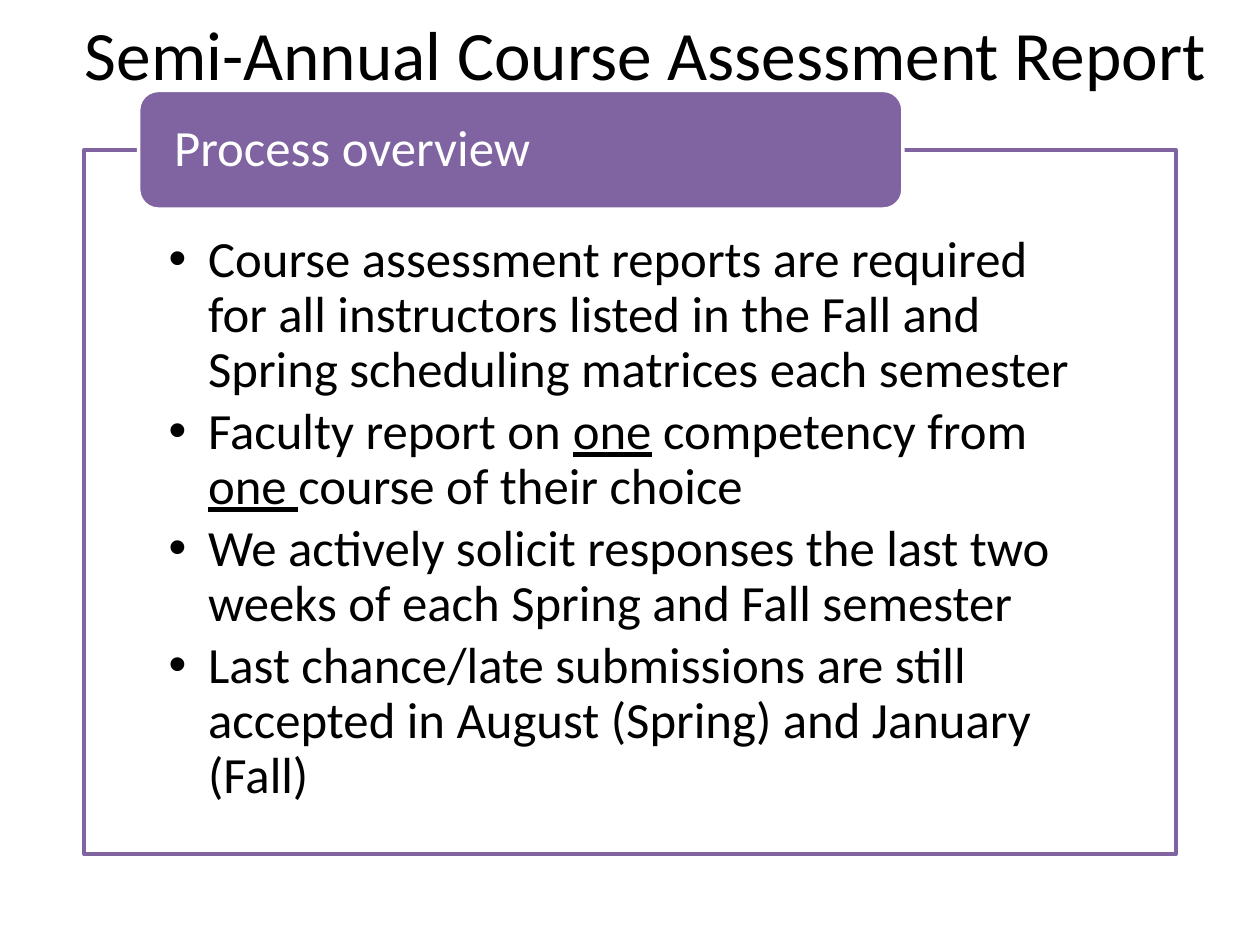
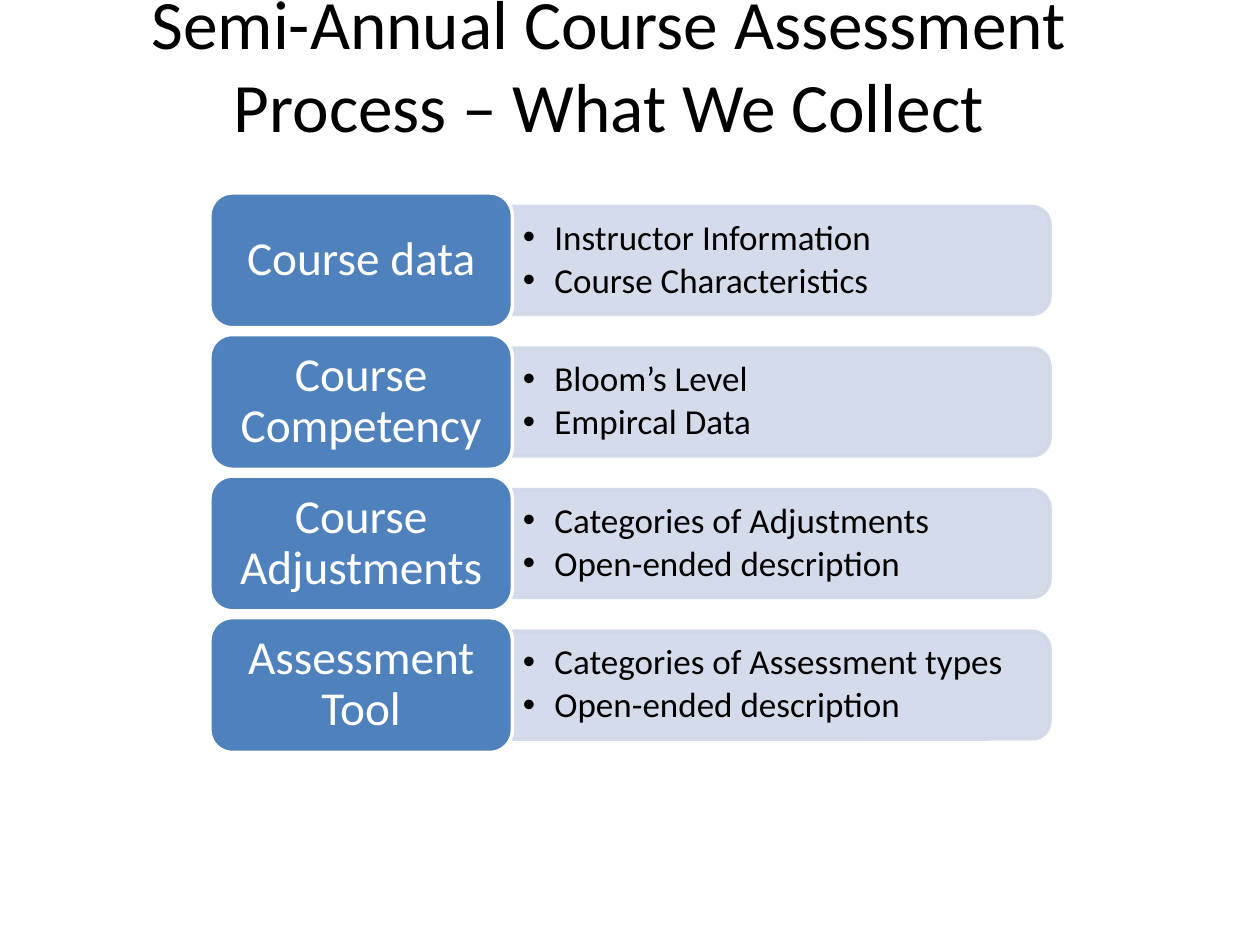
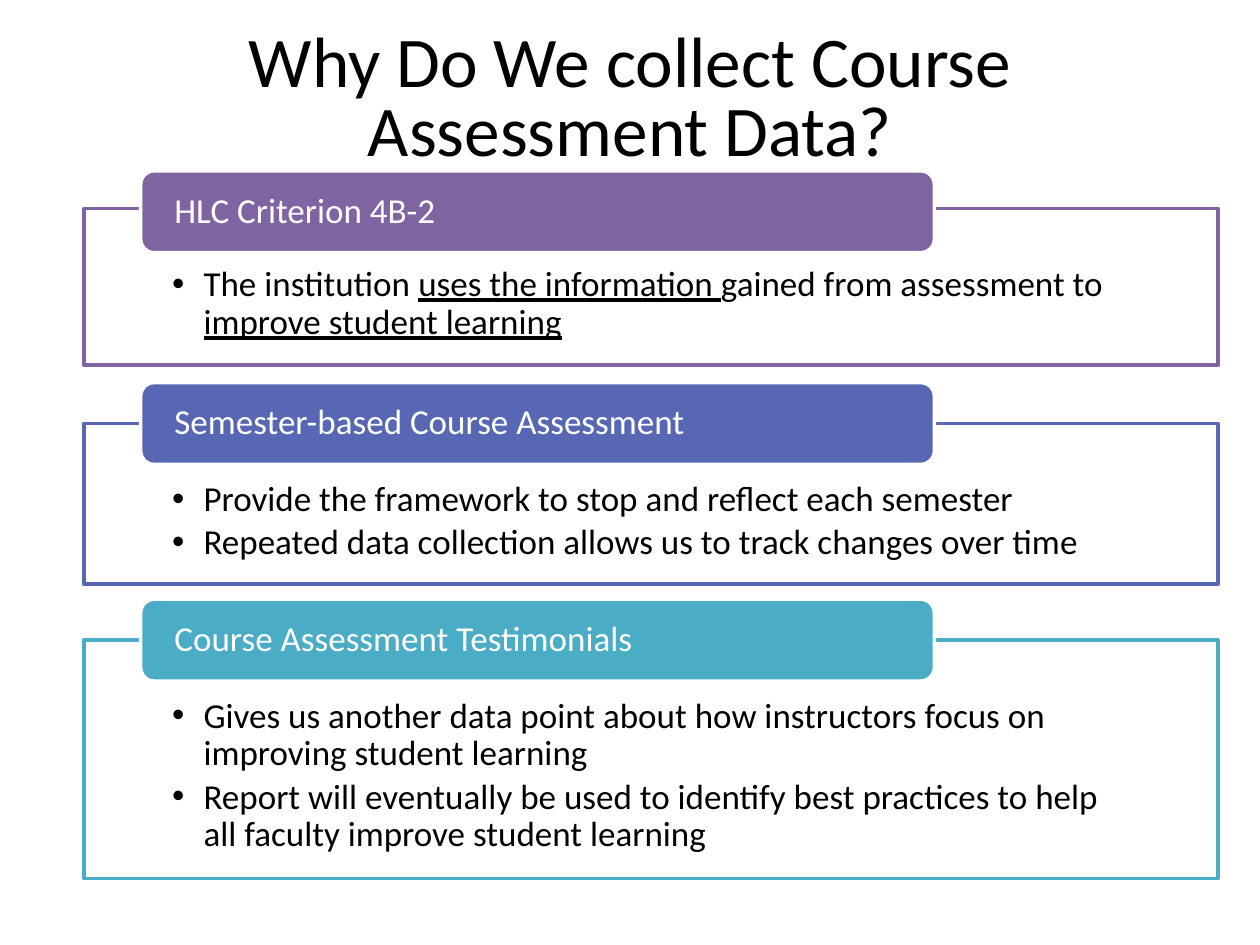
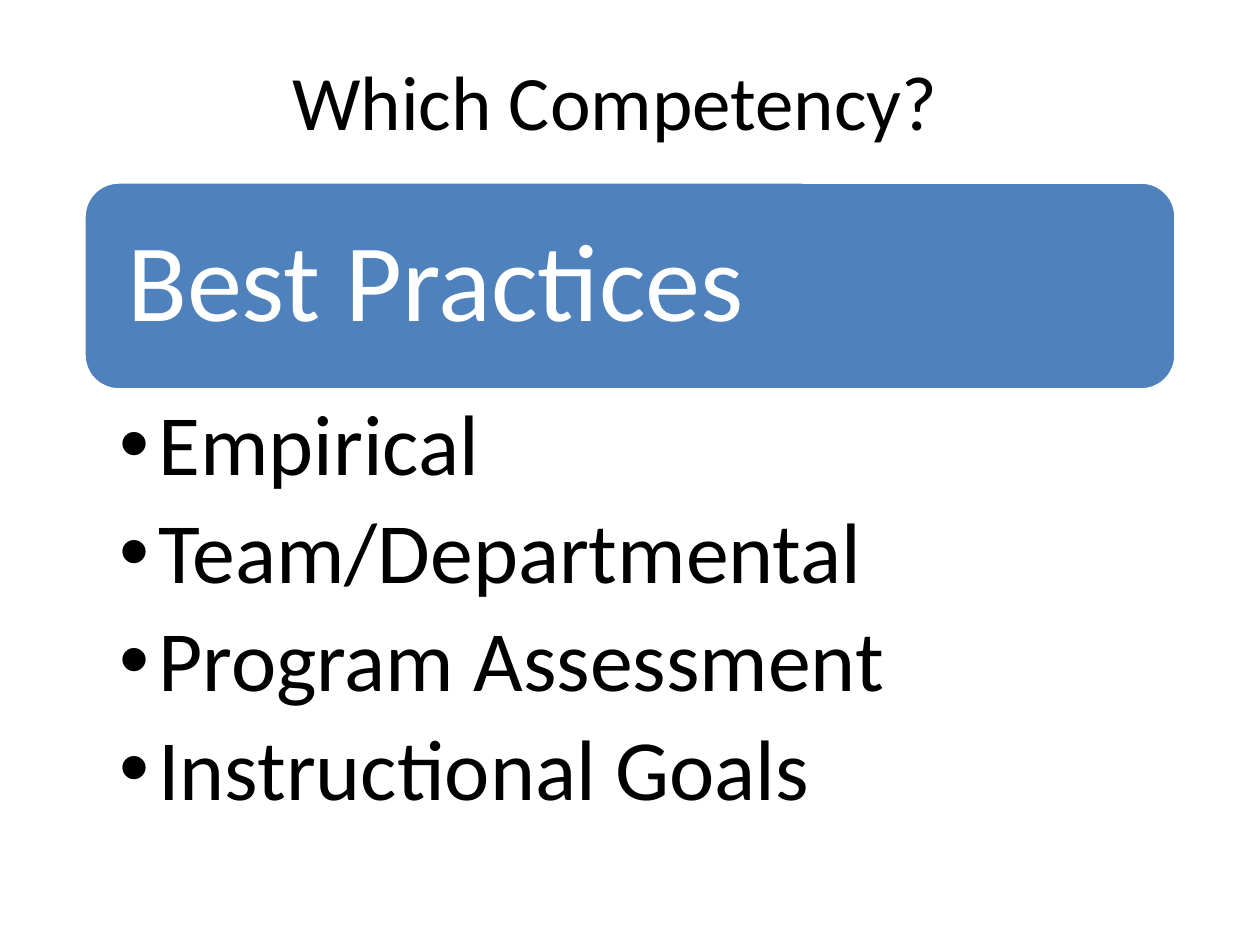
from pptx import Presentation
from pptx.dml.color import RGBColor
from pptx.enum.shapes import MSO_SHAPE
from pptx.enum.text import MSO_ANCHOR, PP_ALIGN
from pptx.oxml.ns import qn
from pptx.util import Pt
from lxml import etree

RECT = MSO_SHAPE.RECTANGLE
ROUND = MSO_SHAPE.ROUNDED_RECTANGLE
CAPPED = MSO_SHAPE.ROUND_2_SAME_RECTANGLE
TOP, MIDDLE, BOTTOM = MSO_ANCHOR.TOP, MSO_ANCHOR.MIDDLE, MSO_ANCHOR.BOTTOM
LEFT, CENTER = PP_ALIGN.LEFT, PP_ALIGN.CENTER

COLORS = {
    "black": "000000",
    "white": "FFFFFF",
    "purple": "8064A2",
    "indigo": "5767B4",
    "teal": "4BACC6",
    "blue": "4F81BD",
    "pale": "D0D8E8",
}


def color(name):
    return RGBColor.from_string(COLORS[name])


class Deck:
    font = "Calibri"

    def __init__(self):
        self.prs = Presentation()
        self.prs.slide_width, self.prs.slide_height = Pt(720), Pt(540)
        self.slide = None

    def start(self):
        self.slide = self.prs.slides.add_slide(self.prs.slide_layouts[6])

    def shape(self, kind, box, fill, line):
        item = self.slide.shapes.add_shape(kind, *map(Pt, box))
        item.shadow.inherit = False
        item.fill.solid()
        item.fill.fore_color.rgb = color(fill)
        item.line.color.rgb = color(line)
        item.line.width = Pt(2)
        return item

    def fade(self, item, query):
        for tone in item._element.spPr.findall(query):
            etree.SubElement(tone, qn("a:alpha"), val="90000")

    def box(self, box):
        return self.slide.shapes.add_textbox(*map(Pt, box))

    def label(self, item, lines, size, ink="black", inset=(7.2, 3.6, 7.2, 3.6),
              anchor=MIDDLE, align=LEFT, pitch=0.9, gap=0, indent=0):
        frame = item.text_frame
        frame.word_wrap = True
        frame.vertical_anchor = anchor
        (frame.margin_left, frame.margin_top,
         frame.margin_right, frame.margin_bottom) = map(Pt, inset)
        for num, line in enumerate(lines):
            para = frame.add_paragraph() if num else frame.paragraphs[0]
            para.alignment = align
            para.line_spacing = pitch
            if num < len(lines) - 1:
                para.space_after = Pt(size * gap)
            if indent:
                self.bullet(para, indent)
            for part, text in enumerate(line.split("_")):
                if text:
                    run = para.add_run()
                    run.text = text
                    run.font.name = self.font
                    run.font.size = Pt(size)
                    run.font.color.rgb = color(ink)
                    run.font.underline = part % 2 == 1

    def bullet(self, para, indent):
        para.level = 1
        props = para._p.get_or_add_pPr()
        props.set("marL", str(Pt(indent)))
        props.set("indent", str(-Pt(indent)))
        etree.SubElement(props, qn("a:buFont"), typeface="Arial")
        etree.SubElement(props, qn("a:buChar"), char="•")

    def title(self, text, box, size=39.6, anchor=BOTTOM, pitch=1.0):
        self.label(self.box(box), [text], size, anchor=anchor, align=CENTER, pitch=pitch)

    def panel(self, head, lines, hue, top, width, height, size, indent, drop=0):
        left, side, tall = 48, width * 0.08 - 0.03 * 50, size * 2.34
        frame = self.shape(RECT, (left, top, width, height), "white", hue)
        self.fade(frame, qn("a:solidFill") + "/" + qn("a:srgbClr"))
        self.label(frame, lines, size, inset=(side, size * 1.65, side, size * 0.57),
                   anchor=TOP, gap=0.15, indent=indent)
        tab = self.shape(ROUND, (left + width * 0.05, top - tall / 2 + drop,
                                 width * 0.7, tall), hue, "white")
        self.label(tab, [head], size, "white", inset=(17, 0, 17, 0))

    def row(self, head, lines, top):
        left, wide, tall = 120, 480, 77
        split, span, thick = left + wide * 0.36, wide * 0.64, tall * 0.8
        mid = top + tall / 2
        bar = self.shape(CAPPED, (split + (span - thick) / 2, mid - span / 2,
                                  thick, span), "pale", "pale")
        bar.rotation = 90
        self.fade(bar, ".//" + qn("a:srgbClr"))
        note = self.box((split, mid - 27.7, span - 3.4, 55.4))
        self.label(note, lines, 20, inset=(6, 3, 6, 3), gap=0.15, indent=18)
        name = self.shape(ROUND, (left, top, wide * 0.36, tall), "blue", "white")
        self.label(name, [head], 27, "white", inset=(8, 4, 8, 4), align=CENTER)


def main():
    deck = Deck()

    deck.start()
    deck.panel("Process overview", [
        "Course assessment reports are required for all instructors listed "
        "in the Fall and Spring scheduling matrices each semester",
        "Faculty report on _one_ competency from _one _course of their choice",
        "We actively solicit responses the last two weeks of each Spring and Fall semester",
        "Last chance/late submissions are still accepted in August (Spring) and January (Fall)",
    ], "purple", 85.6, 624, 402.5, 29, 22.5)
    deck.title("Semi-Annual Course Assessment Report", (36, 0, 666, 57.6))

    deck.start()
    deck.title("Semi-Annual Course Assessment Process – What We Collect", (24, -3, 648, 90))
    rows = [
        ("Course data", ["Instructor Information", "Course Characteristics"]),
        ("Course Competency", ["Bloom’s Level", "Empircal Data"]),
        ("Course Adjustments", ["Categories of Adjustments", "Open-ended description"]),
        ("Assessment Tool", ["Categories of Assessment types", "Open-ended description"]),
    ]
    for num, (head, lines) in enumerate(rows):
        deck.row(head, lines, 110.3 + num * 80.9)

    deck.start()
    panels = [
        ("HLC Criterion 4B-2", [
            "The institution _uses the information _gained from assessment to "
            "_improve student learning_",
        ], "purple", 119.2, 89.5, 1.8),
        ("Semester-based Course Assessment", [
            "Provide the framework to stop and reflect each semester",
            "Repeated data collection allows us to track changes over time",
        ], "indigo", 242, 91.8, 0),
        ("Course Assessment Testimonials", [
            "Gives us another data point about how instructors focus on "
            "improving student learning",
            "Report will eventually be used to identify best practices to help "
            "all faculty improve student learning",
        ], "teal", 365.8, 136.2, 0),
    ]
    for head, lines, hue, top, height, drop in panels:
        deck.panel(head, lines, hue, top, 648, height, 20, 18, drop)
    deck.title("Why Do We collect Course Assessment Data?", (36, 13, 648, 90),
               40.7, MIDDLE, 0.8)

    deck.start()
    banner = deck.shape(ROUND, (48, 104, 624, 118.8), "blue", "white")
    deck.label(banner, ["Best Practices"], 63, "white", inset=(18.9,) * 4)
    deck.label(deck.box((48, 223, 624, 267)), [
        "Empirical", "Team/Departmental", "Program Assessment", "Instructional Goals",
    ], 49, inset=(20, 6.5, 35, 6.5), anchor=TOP, gap=0.18, indent=22.5)
    deck.title("Which Competency?", (24, 18, 655, 69), 44)

    deck.prs.save("out.pptx")


if __name__ == "__main__":
    main()
